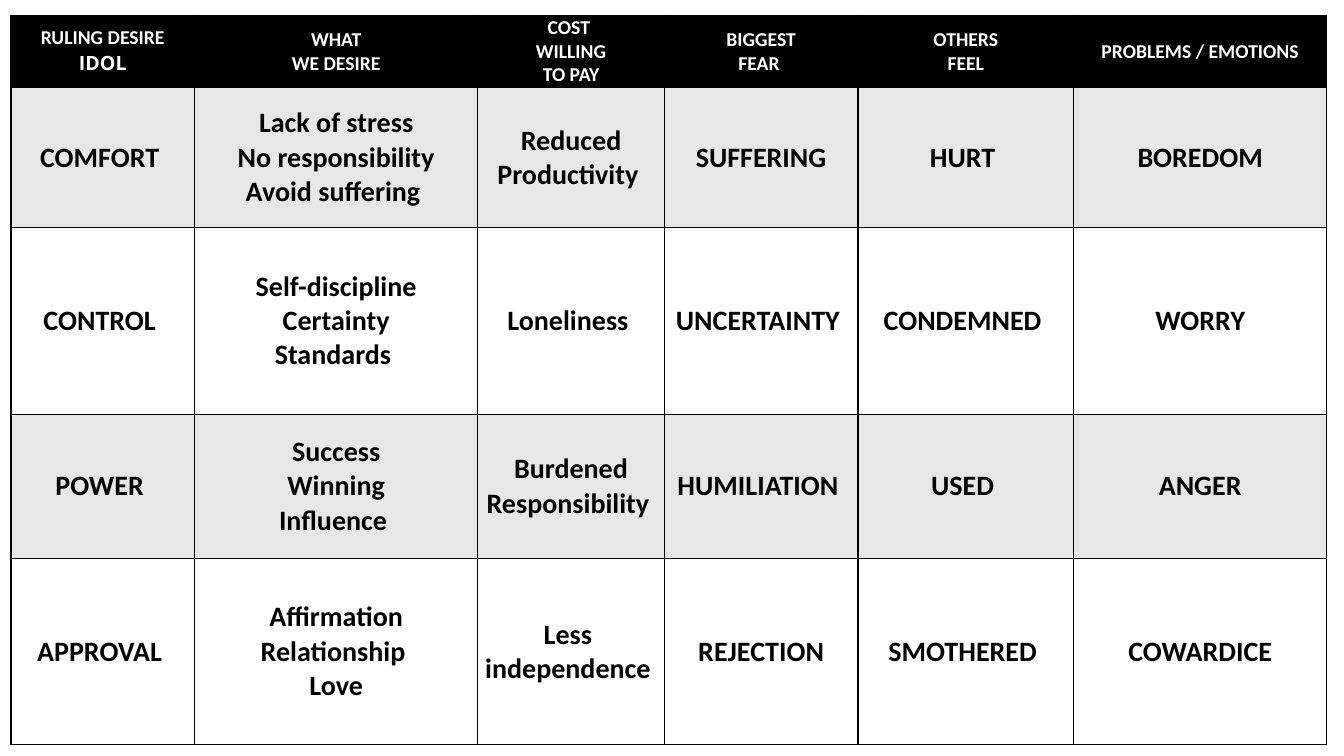
from dataclasses import dataclass

from lxml import etree
from pptx import Presentation
from pptx.dml.color import RGBColor
from pptx.enum import text
from pptx.oxml import ns
from pptx.util import Inches, Pt


@dataclass(frozen=True)
class Theme:
    """Colours, fonts and type sizes of the slide."""
    black: str = "000000"
    white: str = "FFFFFF"
    band: str = "E7E7E7"
    font: str = "Calibri"
    idol_font: str = "Open Sans"
    header_size: int = 14
    body_size: int = 20
    border_width: int = 1


COLUMN_WIDTHS = [1.82, 2.81, 1.85, 1.92, 2.14, 2.51]
ROW_HEIGHTS = [0.72, 1.39, 1.85, 1.43, 1.85]
IDOL_ROWS = [
    ["RULING DESIRE\nIDOL", "WHAT\nWE DESIRE", "COST \nWILLING\nTO PAY",
     "BIGGEST\nFEAR ", "OTHERS\nFEEL", "PROBLEMS / EMOTIONS"],
    ["COMFORT ", "Lack of stress\nNo responsibility\nAvoid suffering ",
     "Reduced\nProductivity ", "SUFFERING", "HURT ", "BOREDOM"],
    ["CONTROL ", "Self-discipline\nCertainty\nStandards ",
     "Loneliness ", "UNCERTAINTY ", "CONDEMNED ", "WORRY"],
    ["POWER ", "Success\nWinning\nInfluence ",
     "Burdened\nResponsibility ", "HUMILIATION ", "USED ", "ANGER"],
    ["APPROVAL ", "Affirmation\nRelationship \nLove",
     "Less \nindependence ", "REJECTION", "SMOTHERED ", "COWARDICE"],
]


class SlideBuilder:
    """Draws table elements on one slide in a given theme."""

    def __init__(self, slide, theme):
        self.slide = slide
        self.theme = theme

    def add_table(self, left, top, widths, heights, rows):
        """Add a table with a dark header and banded rows."""
        frame = self.slide.shapes.add_table(
            len(heights), len(widths), Inches(left), Inches(top),
            Inches(sum(widths)), Inches(sum(heights)))
        table = frame.table
        for column, width in zip(table.columns, widths):
            column.width = Inches(width)
        for row, height in zip(table.rows, heights):
            row.height = Inches(height)
        for row_index, values in enumerate(rows):
            for column_index, value in enumerate(values):
                self.fill_cell(table.cell(row_index, column_index), value, row_index)
        return table

    def fill_cell(self, cell, value, row_index):
        """Write one cell and style it by its row."""
        theme = self.theme
        header = row_index == 0
        fill = theme.black if header else theme.band if row_index % 2 else theme.white
        self.add_borders(cell)
        cell.fill.solid()
        cell.fill.fore_color.rgb = RGBColor.from_string(fill)
        cell.vertical_anchor = text.MSO_ANCHOR.MIDDLE
        cell.margin_left = cell.margin_right = cell.margin_top = cell.margin_bottom = 0
        cell.text_frame.text = value
        for paragraph in cell.text_frame.paragraphs:
            paragraph.alignment = text.PP_ALIGN.CENTER
            for run in paragraph.runs:
                run.font.name = theme.idol_font if run.text == "IDOL" else theme.font
                run.font.size = Pt(theme.header_size if header else theme.body_size)
                run.font.bold = True
                run.font.color.rgb = RGBColor.from_string(
                    theme.white if header else theme.black)

    def add_borders(self, cell):
        """Draw a thin line on all four sides of a cell."""
        properties = cell._tc.get_or_add_tcPr()
        for side in ("a:lnL", "a:lnR", "a:lnT", "a:lnB"):
            line = etree.SubElement(properties, ns.qn(side),
                                    w=str(Pt(self.theme.border_width)))
            fill = etree.SubElement(line, ns.qn("a:solidFill"))
            etree.SubElement(fill, ns.qn("a:srgbClr"), val=self.theme.black)


def main():
    """Build the slide and save it."""
    presentation = Presentation()
    presentation.slide_width = Inches(13.33)
    presentation.slide_height = Inches(7.5)
    slide = presentation.slides.add_slide(presentation.slide_layouts[6])
    builder = SlideBuilder(slide, Theme())
    builder.add_table(0.11, 0.15, COLUMN_WIDTHS, ROW_HEIGHTS, IDOL_ROWS)
    presentation.save("out.pptx")


if __name__ == "__main__":
    main()
